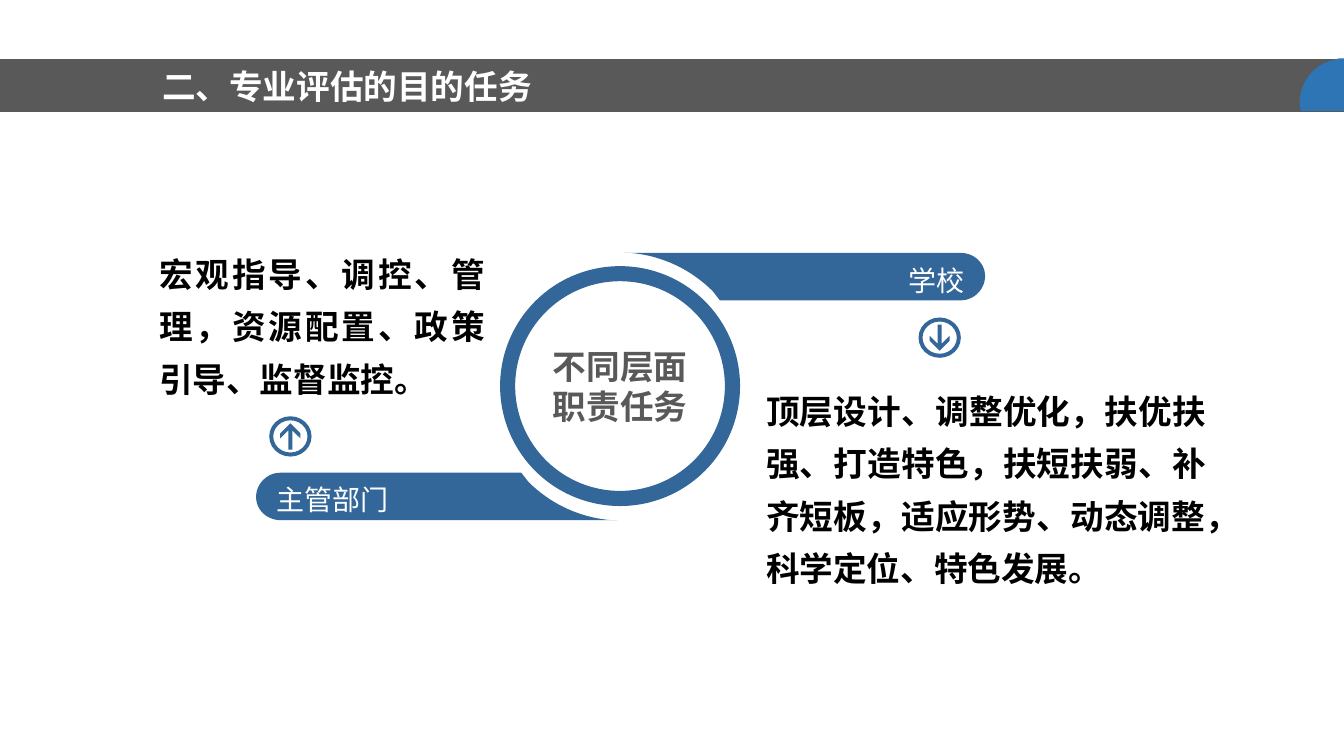
from lxml.etree import SubElement
from pptx import Presentation
from pptx.dml.color import RGBColor
from pptx.enum.shapes import MSO_SHAPE as Preset
from pptx.enum.text import MSO_ANCHOR as Anchor, PP_ALIGN as Align
from pptx.oxml.ns import qn
from pptx.util import Inches, Pt

BLUE = RGBColor(0x33, 0x66, 0x99)
CORNER_BLUE = RGBColor(0x2E, 0x75, 0xB6)
GREY = RGBColor(0x59, 0x59, 0x59)
WHITE = RGBColor(0xFF, 0xFF, 0xFF)
BLACK = RGBColor(0, 0, 0)
CJK = "Noto Sans CJK SC"


def curve(p0, p1, p2, p3, steps=16):
    """Return points along a cubic curve from p0 to p3."""
    fractions = [step / steps for step in range(steps + 1)]
    return [tuple((1 - t) ** 3 * a + 3 * (1 - t) ** 2 * t * b
                  + 3 * (1 - t) * t ** 2 * c + t ** 3 * d
                  for a, b, c, d in zip(p0, p1, p2, p3)) for t in fractions]


class DutySlide:
    """Draws the elements of one slide in a shared style."""

    def __init__(self, slide):
        """Keep the slide to draw on."""
        self.slide = slide

    def paint(self, shape, color):
        """Give a shape a flat fill without line or shadow."""
        shape.shadow.inherit = False
        shape.fill.solid()
        shape.fill.fore_color.rgb = color
        shape.line.fill.background()
        return shape

    def preset(self, kind, box, color):
        """Add a filled preset shape."""
        return self.paint(self.slide.shapes.add_shape(kind, *map(Inches, box)), color)

    def ring(self, box, thickness):
        """Add a blue ring with a relative thickness."""
        ring = self.preset(Preset.DONUT, box, BLUE)
        ring.adjustments[0] = thickness
        return ring

    def outline(self, points, color):
        """Add a filled closed outline."""
        corners = [(Inches(x), Inches(y)) for x, y in points]
        builder = self.slide.shapes.build_freeform(*corners[0])
        builder.add_line_segments(corners[1:], close=True)
        return self.paint(builder.convert_to_shape(), color)

    def label(self, shape, lines, size, color, bold=False, align=Align.LEFT,
              spacing=1.0, font="Arial", insets=(0.1, 0.05), anchor=Anchor.MIDDLE):
        """Put lines of text into a shape."""
        frame = shape.text_frame
        frame.word_wrap = True
        frame.vertical_anchor = anchor
        frame.margin_left = frame.margin_right = Inches(insets[0])
        frame.margin_top = frame.margin_bottom = Inches(insets[1])
        frame.text = "\n".join(lines)
        for paragraph in frame.paragraphs:
            paragraph.alignment = align
            paragraph.line_spacing = spacing
            paragraph.font.name = font
            paragraph.font.size = Pt(size)
            paragraph.font.bold = bold
            paragraph.font.color.rgb = color
            defaults = paragraph._p.pPr.find(qn("a:defRPr"))
            SubElement(defaults, qn("a:ea")).set("typeface", CJK)

    def text(self, box, line, **style):
        """Add a bold text box."""
        holder = self.slide.shapes.add_textbox(*map(Inches, box))
        self.label(holder, [line], 24, bold=True, anchor=Anchor.TOP, **style)

    def banner(self, points, title, align):
        """Add a blue banner with its title."""
        self.label(self.outline(points, BLUE), [title], 20, WHITE,
                   align=align, spacing=1.2, insets=(0.2, 0.05))

    def arrow_icon(self, x, y, direction):
        """Add a ringed arrow, direction 1 for down and -1 for up."""
        self.ring((x - 0.21, y - 0.2, 0.42, 0.4), 0.1)
        half = [(0.02, -0.13), (0.02, 0.06), (0.1, -0.02), (0.1, 0.03), (0, 0.13)]
        arrow = half + [(-dx, dy) for dx, dy in half[-2::-1]]
        self.outline([(x + dx, y + direction * dy) for dx, dy in arrow], BLUE)


def main():
    """Build the slide and save it."""
    deck = Presentation()
    deck.slide_width, deck.slide_height = Inches(13.33), Inches(7.5)
    page = DutySlide(deck.slides.add_slide(deck.slide_layouts[6]))

    school = [(6.19, 2.51)]
    school += curve((9.53, 2.51), (9.66, 2.51), (9.77, 2.61), (9.77, 2.74))
    school += curve((9.77, 2.74), (9.77, 2.87), (9.66, 2.98), (9.53, 2.98))[1:]
    school += [(7.14, 2.98)]
    school += curve((7.07, 2.89), (6.86, 2.68), (6.58, 2.54), (6.26, 2.51))
    authority = [(12.31 - x, 7.67 - y) for x, y in school]
    page.banner(school, "学校", Align.RIGHT)
    page.banner(authority, "主管部门", Align.LEFT)

    hub = page.ring((4.96, 2.64, 2.38, 2.38), 0.063)
    page.label(hub, ["不同层面", "职责任务"], 24, GREY, bold=True,
               align=Align.CENTER, insets=(0, 0))

    duty = dict(color=BLACK, align=Align.JUSTIFY, spacing=1.3, font=CJK)
    page.text((7.5, 3.71, 4.56, 2.2),
              "顶层设计、调整优化，扶优扶强、打造特色，扶短扶弱、补齐短板，"
              "适应形势、动态调整，科学定位、特色发展。", **duty)
    page.text((1.48, 2.35, 3.43, 1.68),
              "宏观指导、调控、管理，资源配置、政策引导、监督监控。", **duty)
    page.arrow_icon(2.88, 4.33, -1)
    page.arrow_icon(9.32, 3.35, 1)

    page.preset(Preset.FLOWCHART_PROCESS, (0, 0.59, 13.33, 0.52), GREY)
    page.text((1.51, 0.6, 5.5, 0.5), "二、专业评估的目的任务", color=WHITE)
    corner = [(13.28, 0.58), (13.33, 0.58), (13.33, 1.1), (12.9, 1.1)]
    corner += curve((12.89, 1.02), (12.89, 0.81), (13.04, 0.63), (13.24, 0.59))
    page.outline(corner, CORNER_BLUE)

    deck.save("out.pptx")


if __name__ == "__main__":
    main()
